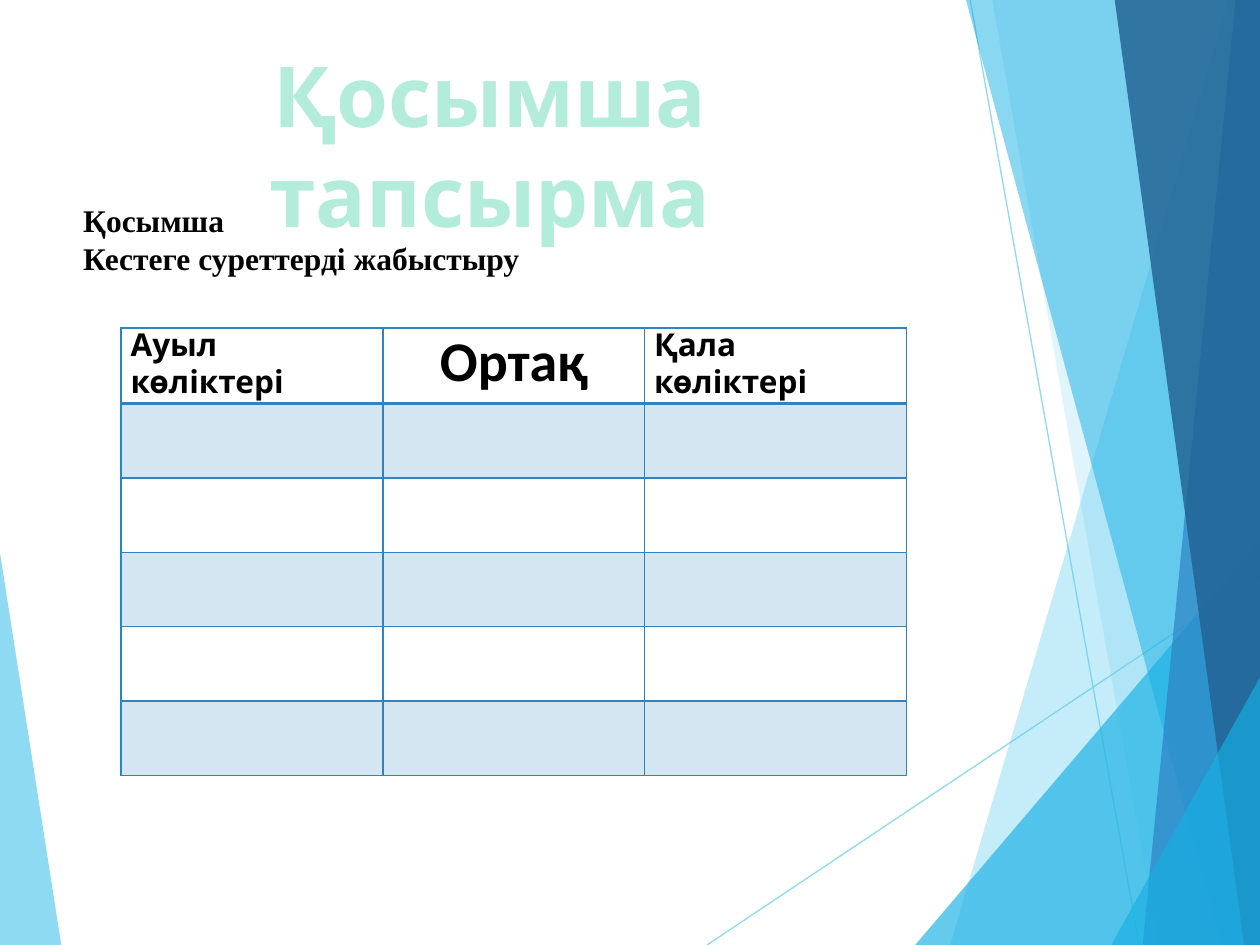
from pptx import Presentation
from pptx.dml.color import RGBColor
from pptx.enum.shapes import MSO_CONNECTOR
from pptx.enum.text import MSO_ANCHOR, MSO_AUTO_SIZE, PP_ALIGN
from pptx.oxml.ns import qn
from pptx.util import Pt
from lxml.etree import SubElement

# Content
TITLE = "Қосымша тапсырма"
TASK = ["Қосымша", "Кестеге суреттерді жабыстыру"]
HEADERS = [
    ("Ауыл көліктері", "Karla", 18, PP_ALIGN.LEFT),
    ("Ортақ", "Calibri", 32, PP_ALIGN.CENTER),
    ("Қала көліктері", "Karla", 18, PP_ALIGN.LEFT),
]
EMPTY_ROWS = 5

COLORS = {
    "sky": "5FCBEF", "cyan": "17B0E4", "blue": "2E83C3", "navy": "226292",
    "mint": "B3ECDA", "band": "D5E6F3", "black": "000000",
}
WIDTH, HEIGHT = 720, 540

# Background facets: colour, opacity in percent, corner points
LEFT_FACET = ("sky", 70, [(0, 316), (35.3, HEIGHT), (0, HEIGHT)])
RAYS = [((404, HEIGHT), (WIDTH, 329)), ((554.4, 0), (651, HEIGHT))]
RIGHT_FACETS = [
    ("sky", 36, [(702, 0), (543, HEIGHT), (WIDTH, HEIGHT), (WIDTH, 0)]),
    ("sky", 20, [(567.4, 0), (661.7, HEIGHT), (WIDTH, HEIGHT), (WIDTH, 0)]),
    ("cyan", 66, [(522.7, HEIGHT), (WIDTH, 309), (WIDTH, HEIGHT)]),
    ("cyan", 50, [(552.2, 0), (698.4, HEIGHT), (WIDTH, HEIGHT), (WIDTH, 0)]),
    ("blue", 70, [(706.3, 0), (653, HEIGHT), (WIDTH, HEIGHT), (WIDTH, 0)]),
    ("navy", 82, [(637.4, 0), (711.4, HEIGHT), (WIDTH, HEIGHT), (WIDTH, 0)]),
    ("cyan", 66, [(635, HEIGHT), (WIDTH, 387), (WIDTH, HEIGHT)]),
]


def rgb(name):
    return RGBColor.from_string(COLORS[name])


def set_opacity(shape, percent):
    color = next(shape._element.spPr.iter(qn("a:srgbClr")))
    SubElement(color, qn("a:alpha")).set("val", str(percent * 1000))


def add_facet(page, color, opacity, points):
    builder = page.shapes.build_freeform(*points[0], scale=Pt(1))
    builder.add_line_segments(points[1:], close=True)
    facet = builder.convert_to_shape()
    facet.shadow.inherit = False
    facet.fill.solid()
    facet.fill.fore_color.rgb = rgb(color)
    facet.line.fill.background()
    set_opacity(facet, opacity)


def add_ray(page, start, end):
    ends = [Pt(value) for value in start + end]
    ray = page.shapes.add_connector(MSO_CONNECTOR.STRAIGHT, *ends)
    ray.line.color.rgb = rgb("sky")
    ray.line.width = Pt(0.75)
    set_opacity(ray, 70)
    SubElement(ray._element.spPr, qn("a:effectLst"))


def add_text(para, text, font, size, color="black"):
    span = para.add_run()
    span.text = text
    span.font.name = font
    span.font.size = Pt(size)
    span.font.bold = True
    span.font.color.rgb = rgb(color)


def add_borders(cell, bottom, top):
    properties = cell._tc.get_or_add_tcPr()
    for side, width in (("L", 1), ("R", 1), ("T", top), ("B", bottom)):
        border = SubElement(properties, qn(f"a:ln{side}"), w=str(Pt(width)))
        fill = SubElement(border, qn("a:solidFill"))
        SubElement(fill, qn("a:srgbClr"), val=COLORS["blue"])


def add_grid(page, left, top, col_width, row_height):
    rows, cols = EMPTY_ROWS + 1, len(HEADERS)
    frame = page.shapes.add_table(rows, cols, Pt(left), Pt(top),
                                  Pt(col_width * cols), Pt(row_height * rows))
    table = frame.table
    table.horz_banding = False
    for column in table.columns:
        column.width = Pt(col_width)
    for index, row in enumerate(table.rows):
        row.height = Pt(row_height)
        for cell in row.cells:
            add_borders(cell, bottom=2 if index == 0 else 1,
                        top=2 if index == 1 else 1)
            if index % 2:
                cell.fill.solid()
                cell.fill.fore_color.rgb = rgb("band")
            else:
                cell.fill.background()
    for cell, (text, font, size, align) in zip(table.rows[0].cells, HEADERS):
        cell.margin_left = cell.margin_right = Pt(5.4)
        cell.margin_top = cell.margin_bottom = 0
        para = cell.text_frame.paragraphs[0]
        para.alignment = align
        add_text(para, text, font, size)


def main():
    deck = Presentation()
    deck.slide_width, deck.slide_height = Pt(WIDTH), Pt(HEIGHT)
    page = deck.slides.add_slide(deck.slide_layouts[5])

    # Background
    add_facet(page, *LEFT_FACET)
    for start, end in RAYS:
        add_ray(page, start, end)
    for facet in RIGHT_FACETS:
        add_facet(page, *facet)

    # Title
    title = page.shapes.title
    title.left, title.top, title.width, title.height = map(Pt, (42, 21, 476, 66))
    frame = title.text_frame
    frame.word_wrap = True
    frame.auto_size = MSO_AUTO_SIZE.NONE
    frame.vertical_anchor = MSO_ANCHOR.TOP
    frame.paragraphs[0].alignment = PP_ALIGN.CENTER
    add_text(frame.paragraphs[0], TITLE, "Karla", 48, "mint")

    # Task
    box = page.shapes.add_textbox(Pt(40.5), Pt(111.5), Pt(360), Pt(51))
    frame = box.text_frame
    frame.word_wrap = True
    for index, text in enumerate(TASK):
        para = frame.add_paragraph() if index else frame.paragraphs[0]
        add_text(para, text, "Times New Roman", 18)

    # Sorting table
    add_grid(page, left=69.2, top=187.4, col_width=149.6, row_height=42.5)

    deck.save("out.pptx")


if __name__ == "__main__":
    main()
